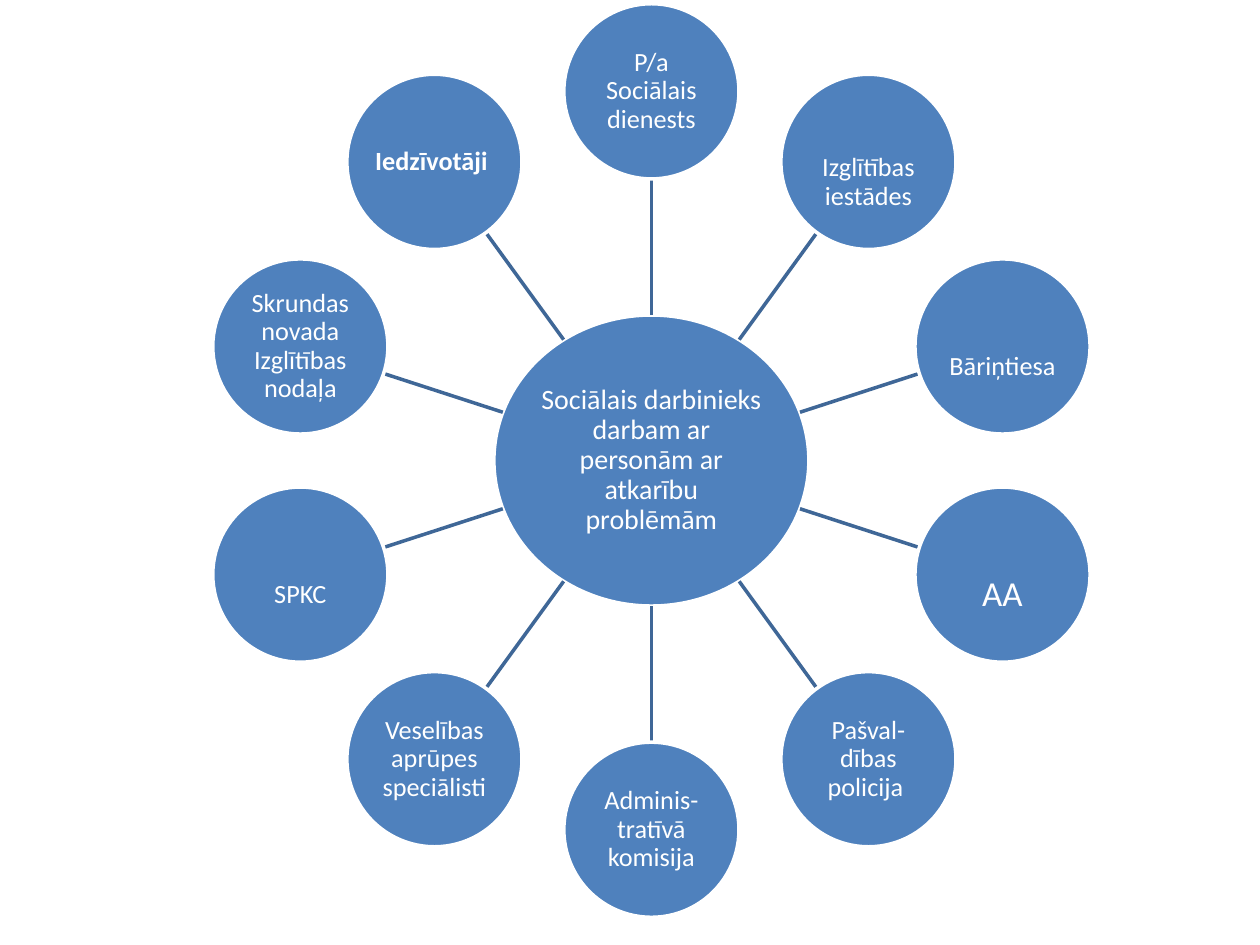
"""Draw a hub of social work with ten partner circles around it."""
from dataclasses import dataclass
from math import cos, hypot, pi, sin

from lxml.etree import SubElement
from pptx import Presentation
from pptx.dml.color import RGBColor
from pptx.enum.shapes import MSO_CONNECTOR, MSO_SHAPE
from pptx.enum.text import MSO_ANCHOR, PP_ALIGN
from pptx.oxml.ns import qn
from pptx.slide import Slide
from pptx.util import Inches, Pt

BLUE = RGBColor(0x4F, 0x81, 0xBD)
DARK_BLUE = RGBColor(0x3F, 0x67, 0x97)
WHITE = RGBColor(0xFF, 0xFF, 0xFF)

CENTER_X, CENTER_Y = 5.17, 3.655
HUB_WIDTH, HUB_HEIGHT = 2.5, 2.31
PARTNER_SIZE = 1.39
ORBIT = 2.93
INSET = 0.01
LOWERED_INSET = 0.34


@dataclass(frozen=True)
class Circle:
    text: str
    size: int = 15
    bold: bool = False
    lowered: bool = False


HUB = Circle("Sociālais darbinieks darbam ar personām ar atkarību problēmām", size=16)
PARTNERS = [
    Circle("P/a Sociālais dienests"),
    Circle("Izglītības iestādes", lowered=True),
    Circle("Bāriņtiesa", lowered=True),
    Circle("AA", size=20, lowered=True),
    Circle("Pašval-dības policija "),
    Circle("Adminis-tratīvā komisija"),
    Circle("Veselības aprūpes speciālisti"),
    Circle("SPKC", lowered=True),
    Circle("Skrundas novada Izglītības nodaļa"),
    Circle("Iedzīvotāji ", bold=True),
]


def add_circle(slide: Slide, circle: Circle, x: float, y: float,
               width: float, height: float) -> None:
    shape = slide.shapes.add_shape(
        MSO_SHAPE.OVAL, Inches(x - width / 2), Inches(y - height / 2),
        Inches(width), Inches(height))
    shape.shadow.inherit = False
    shape.fill.solid()
    shape.fill.fore_color.rgb = BLUE
    shape.line.color.rgb = WHITE
    shape.line.width = Pt(2)

    frame = shape.text_frame
    frame.word_wrap = True
    frame.vertical_anchor = MSO_ANCHOR.MIDDLE
    frame.margin_left = frame.margin_right = frame.margin_bottom = Inches(INSET)
    frame.margin_top = Inches(LOWERED_INSET if circle.lowered else INSET)

    paragraph = frame.paragraphs[0]
    paragraph.text = circle.text
    paragraph.alignment = PP_ALIGN.CENTER
    paragraph.line_spacing = 0.9
    paragraph.font.name = "Calibri"
    paragraph.font.size = Pt(circle.size)
    paragraph.font.bold = circle.bold
    paragraph.font.color.rgb = WHITE


def add_spoke(slide: Slide, direction_x: float, direction_y: float) -> None:
    inner = 1 / hypot(direction_x / (HUB_WIDTH / 2), direction_y / (HUB_HEIGHT / 2))
    outer = ORBIT - PARTNER_SIZE / 2
    start_x, start_y, end_x, end_y = (
        Inches(value)
        for radius in (inner, outer)
        for value in (CENTER_X + radius * direction_x, CENTER_Y + radius * direction_y))
    connector = slide.shapes.add_connector(
        MSO_CONNECTOR.STRAIGHT, start_x, start_y, end_x, end_y)
    connector.line.color.rgb = DARK_BLUE
    connector.line.width = Pt(2)
    SubElement(connector._element.spPr, qn("a:effectLst"))


def main() -> None:
    presentation = Presentation()
    presentation.slide_width = Inches(10)
    presentation.slide_height = Inches(7.5)
    slide = presentation.slides.add_slide(presentation.slide_layouts[6])

    add_circle(slide, HUB, CENTER_X, CENTER_Y, HUB_WIDTH, HUB_HEIGHT)
    for index, partner in enumerate(PARTNERS):
        angle = 2 * pi * index / len(PARTNERS)
        direction_x, direction_y = sin(angle), -cos(angle)
        add_spoke(slide, direction_x, direction_y)
        add_circle(slide, partner, CENTER_X + ORBIT * direction_x,
                   CENTER_Y + ORBIT * direction_y, PARTNER_SIZE, PARTNER_SIZE)

    presentation.save("out.pptx")


if __name__ == "__main__":
    main()
